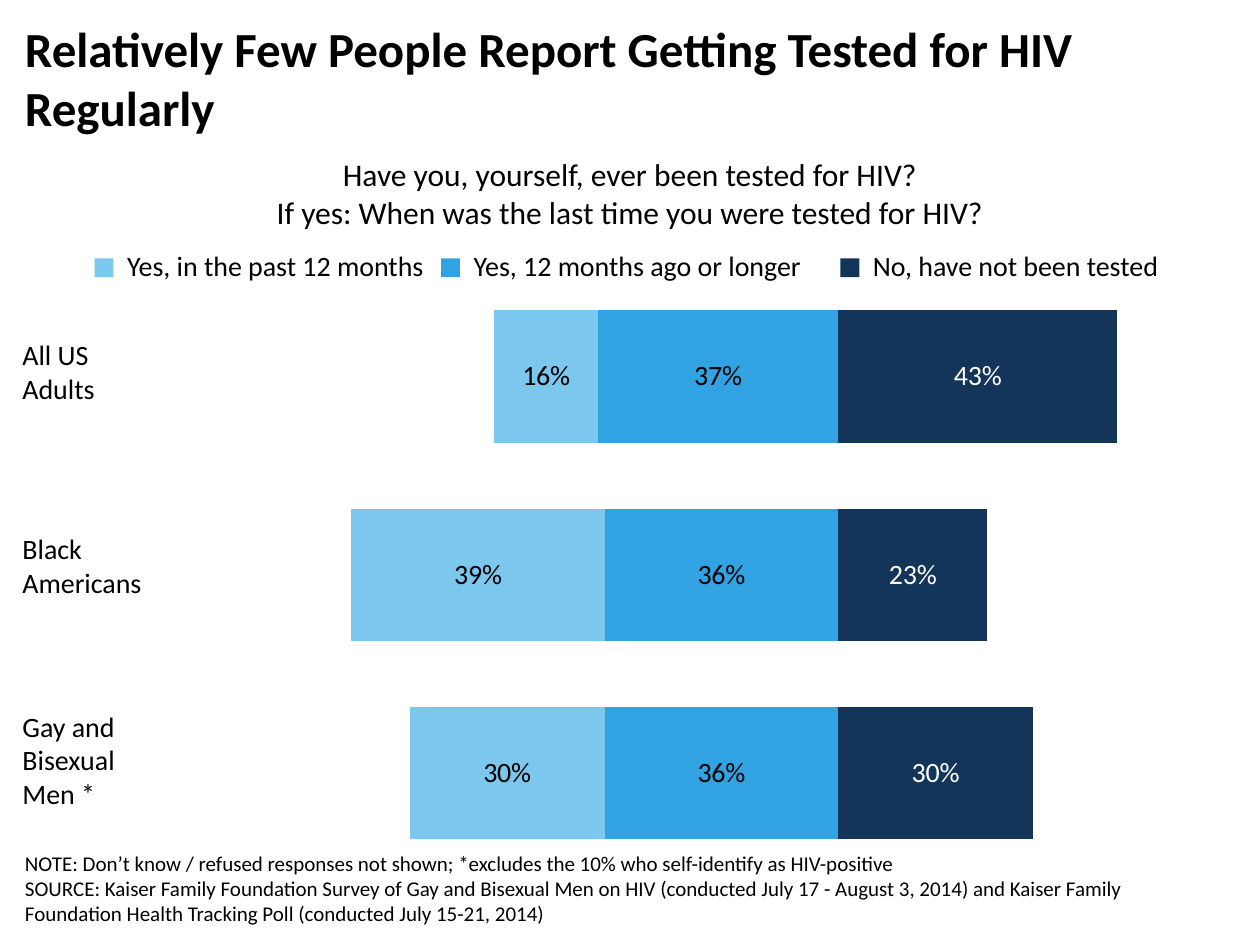
from lxml.etree import SubElement
from pptx import Presentation
from pptx.chart.data import CategoryChartData
from pptx.dml.color import RGBColor
from pptx.enum.chart import XL_CHART_TYPE as ChartType, XL_LABEL_POSITION as LabelPosition
from pptx.enum.shapes import MSO_SHAPE as Preset
from pptx.enum.text import MSO_ANCHOR as Anchor, PP_ALIGN as Align
from pptx.oxml.ns import qn
from pptx.util import Pt

EMU_PER_PX = 9144
FONT = "Calibri"
BLACK, WHITE = "000000", "FFFFFF"
LIGHT, MID, NAVY = "7BC7ED", "31A3E3", "133559"

TITLE = "Relatively Few People Report Getting Tested for HIV Regularly"
QUESTION = [
    "Have you, yourself, ever been tested for HIV?",
    "If yes: When was the last time you were tested for HIV?",
]
NOTES = [
    "NOTE: Don’t know / refused responses not shown; *excludes the 10% who self-identify as HIV-positive",
    "SOURCE: Kaiser Family Foundation Survey of Gay and Bisexual Men on HIV (conducted July 17 - August 3, 2014) "
    "and Kaiser Family Foundation Health Tracking Poll (conducted July 15-21, 2014)",
]
GROUPS = [
    ("All US Adults", 263, 117, 64),
    ("Black Americans", 417, 142, 64),
    ("Gay and Bisexual Men *", 558, 125, 91),
]
LEGEND = [
    ("Yes, in the past 12 months", LIGHT, 75, 259),
    ("Yes, 12 months ago or longer", MID, 350, 301),
    ("No, have not been tested", NAVY, 667, 251),
]
CATEGORIES = ["1", "2", "3"]
SERIES = [
    ("Series 1", [-0.36, -0.36, -0.37], MID, BLACK),
    ("Series 2", [-0.30, -0.39, -0.16], LIGHT, BLACK),
    ("Series 3", [0.30, 0.23, 0.43], NAVY, WHITE),
]
PLOT_LAYOUT = [
    ("layoutTarget", "inner"), ("xMode", "edge"), ("yMode", "edge"),
    ("x", "0.143"), ("y", "0.113"), ("w", "0.841"), ("h", "0.859"),
]


def px(*lengths):
    return [length * EMU_PER_PX for length in lengths]


def color(value):
    return RGBColor.from_string(value)


def style_font(font, size, fill=BLACK, bold=False):
    font.name, font.size, font.bold = FONT, Pt(size), bold
    font.color.rgb = color(fill)


def add_text(shapes, lines, box, size, bold=False, align=Align.LEFT, anchor=Anchor.TOP):
    text_frame = shapes.add_textbox(*px(*box)).text_frame
    text_frame.word_wrap = True
    text_frame.vertical_anchor = anchor
    text_frame.text = "\n".join(lines)
    for paragraph in text_frame.paragraphs:
        paragraph.alignment = align
        for run in paragraph.runs:
            style_font(run.font, size, bold=bold)


def set_plot_layout(chart):
    plot_area = chart.plots[0]._element.getparent()
    for old in plot_area.findall(qn("c:layout")):
        plot_area.remove(old)
    layout = SubElement(plot_area, qn("c:layout"))
    plot_area.insert(0, layout)
    manual = SubElement(layout, qn("c:manualLayout"))
    for name, value in PLOT_LAYOUT:
        SubElement(manual, qn("c:" + name)).set("val", value)


def add_bars(slide):
    data = CategoryChartData(number_format="0%")
    data.categories = CATEGORIES
    for name, values, _, _ in SERIES:
        data.add_series(name, values)
    chart = slide.shapes.add_chart(ChartType.BAR_STACKED, *px(10, 158, 980, 550), data).chart
    chart.has_legend = chart.has_title = False
    style_font(chart.font, 18)
    chart.category_axis.visible = False
    axis = chart.value_axis
    axis.minimum_scale, axis.maximum_scale = -1, 0.6
    axis.has_major_gridlines = axis.visible = False
    plot = chart.plots[0]
    plot.gap_width, plot.overlap, plot.vary_by_categories = 50, 100, False
    for series, (_, _, fill, label_color) in zip(plot.series, SERIES):
        series.invert_if_negative = False
        series.format.fill.solid()
        series.format.fill.fore_color.rgb = color(fill)
        labels = series.data_labels
        labels.show_value = True
        labels.number_format, labels.number_format_is_linked = "0%;0%", False
        labels.position = LabelPosition.CENTER
        style_font(labels.font, 16, label_color)
    set_plot_layout(chart)


def add_legend(slide):
    shapes = slide.shapes.add_group_shape().shapes
    for label, fill, left, width in LEGEND:
        marker = shapes.add_shape(Preset.RECTANGLE, *px(left, 205, 15, 15))
        marker.shadow.inherit = False
        marker.fill.solid()
        marker.fill.fore_color.rgb = color(fill)
        marker.line.fill.background()
        add_text(shapes, [label], (left + 16, 192, width, 37), 16)


def main():
    presentation = Presentation()
    presentation.slide_width, presentation.slide_height = px(1000, 750)
    slide = presentation.slides.add_slide(presentation.slide_layouts[6])
    add_bars(slide)
    add_text(slide.shapes, NOTES, (10, 680, 910, 60), 12, anchor=Anchor.BOTTOM)
    add_text(slide.shapes, [TITLE], (10, 10, 980, 100), 28, bold=True)
    for label, top, width, height in GROUPS:
        add_text(slide.shapes, [label], (8, top, width, height), 16)
    add_text(slide.shapes, QUESTION, (10, 118, 980, 71), 18, align=Align.CENTER)
    add_legend(slide)
    presentation.save("out.pptx")


if __name__ == "__main__":
    main()
